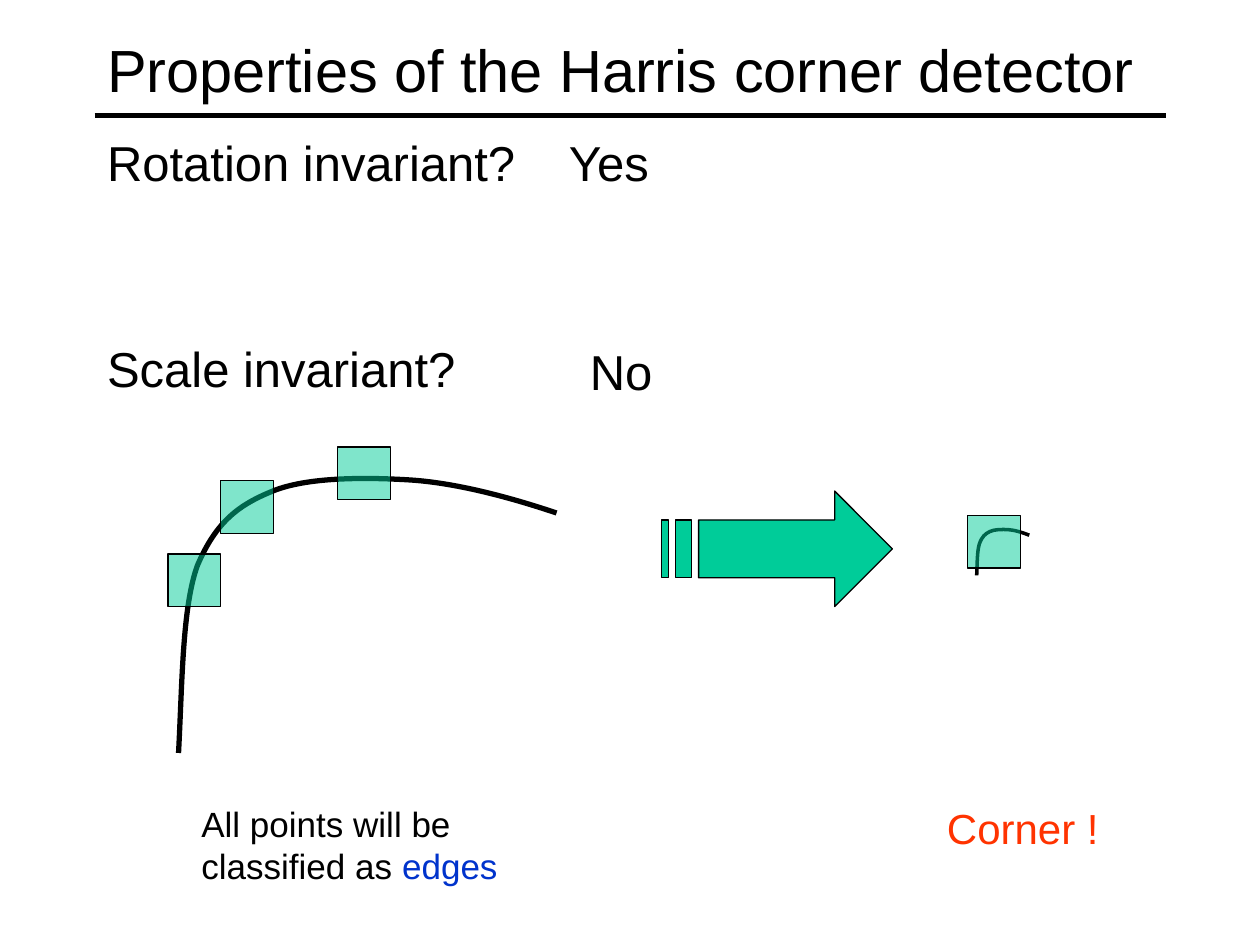
from lxml import etree
from pptx import Presentation
from pptx import util as u
from pptx.dml import color
from pptx.enum import shapes, text
from pptx.oxml import ns

INK = {"black": "000000", "green": "00CC99", "blue": "0033CC", "red": "FF3300"}
BEND = [(0, 1), (.01, .74), (.01, .47), (.05, .32), (.1, .16), (.16, .1), (.25, .05),
        (.34, 0), (.49, 0), (.61, .01), (.73, .02), (.87, .07), (1, .13)]
SIDE = 1.06


def rgb(name):
    """Return the named colour."""
    return color.RGBColor.from_string(INK[name])


def style(item, fill, width):
    """Give a shape its fill and black line."""
    item.shadow.inherit = False
    if fill:
        item.fill.solid()
        item.fill.fore_color.rgb = rgb(fill)
    else:
        item.fill.background()
    item.line.color.rgb = rgb("black")
    item.line.width = u.Pt(width)


def write(slide, box, paras, size, gap=0, anchor=text.MSO_ANCHOR.TOP):
    """Add a text box whose paragraphs are lists of (words, colour)."""
    frame = slide.shapes.add_textbox(*map(u.Cm, box)).text_frame
    frame.word_wrap = True
    frame.vertical_anchor = anchor
    for i, parts in enumerate(paras):
        para = frame.add_paragraph() if i else frame.paragraphs[0]
        para.space_before = u.Pt(gap if i else 0)
        for words, tint in parts:
            run = para.add_run()
            run.text = words
            run.font.name = "Arial"
            run.font.size = u.Pt(size)
            run.font.color.rgb = rgb(tint)


def trace(slide, box, loops, close):
    """Draw loops of unit points scaled to the box."""
    x, y, w, h = box
    loops = [[(u.Cm(x + w * a), u.Cm(y + h * b)) for a, b in loop] for loop in loops]
    pen = slide.shapes.build_freeform(*loops[0][0])
    for i, loop in enumerate(loops):
        if i:
            pen.move_to(*loop[0])
        pen.add_line_segments(loop[1:], close=close)
    return pen.convert_to_shape()


def curve(slide, box, width):
    """Draw the bent edge, turning each three segments into one cubic."""
    item = trace(slide, box, [BEND], False)
    legs = list(item.element.iter(ns.qn("a:lnTo")))
    for i in range(0, len(legs), 3):
        cubic = etree.Element(ns.qn("a:cubicBezTo"))
        legs[i].addprevious(cubic)
        for leg in legs[i:i + 3]:
            cubic.append(leg[0])
            leg.getparent().remove(leg)
    style(item, None, width)


def window(slide, x, y):
    """Place one see-through detector window."""
    pane = slide.shapes.add_shape(shapes.MSO_SHAPE.RECTANGLE, *map(u.Cm, (x, y, SIDE, SIDE)))
    style(pane, "green", .75)
    fill = pane.element.spPr.find(ns.qn("a:solidFill"))
    etree.SubElement(fill[0], ns.qn("a:alpha"), val="50000")


def arrow(slide, box):
    """Draw the striped arrow."""
    bars = [[(a, .25), (a, .75), (b, .75), (b, .25)] for a, b in ((.06, .13), (0, .03))]
    head = [(.75, 0), (.75, .25), (.16, .25), (.16, .75), (.75, .75), (.75, 1), (1, .5)]
    style(trace(slide, box, [head] + bars, True), "green", .75)


def header(slide, box):
    """Place the title and the rule below it."""
    x, y, w, h = box
    rule = slide.shapes.add_connector(
        shapes.MSO_CONNECTOR.STRAIGHT, *map(u.Cm, (x, y + 2.11, x + w, y + 2.11)))
    rule.line.color.rgb = rgb("black")
    rule.line.width = u.Pt(3)
    etree.SubElement(rule.element.spPr, ns.qn("a:effectLst"))
    write(slide, box, [[("Properties of the Harris corner detector", "black")]], 34,
          anchor=text.MSO_ANCHOR.MIDDLE)


def asks(slide, box):
    """Place the two questions and their answers."""
    x, y, w, h = box
    write(slide, box, [[("Rotation invariant?", "black")], [("Scale invariant?", "black")]],
          28, gap=84.4)
    for word, dx, dy in (("Yes", 9.31, 0), ("No", 9.73, 4.23)):
        write(slide, (x + dx, y + dy, 5.29, 1.45), [[(word, "black")]], 28)


def edges(slide, box):
    """Place the large curve, its windows and caption."""
    x, y, w, h = box
    curve(slide, (x + .21, y + .61, 7.62, 5.56), 3)
    for dx, dy in ((0, 2.16), (SIDE, .68), (3.42, 0)):
        window(slide, x + dx, y + dy)
    write(slide, (x + .42, y + 7.04, 7.2, 1.95),
          [[("All points will be classified as ", "black"), ("edges", "blue")]], 20)


def corner(slide, box):
    """Place the arrow, the small curve, its window and caption."""
    x, y, w, h = box
    curve(slide, (x + 6.35, y + .77, 1.06, .93), 2)
    window(slide, x + 6.17, y + .49)
    arrow(slide, (x, y, 4.65, 2.33))
    write(slide, (x + 5.5, y + 6.15, 3.81, 1.27), [[("Corner !", "red")]], 24)


def main():
    """Build and save the slide."""
    deck = Presentation()
    deck.slide_width, deck.slide_height = u.Cm(25.4), u.Cm(19.05)
    slide = deck.slides.add_slide(deck.slide_layouts[6])
    header(slide, (1.91, .22, 21.59, 2.33))
    asks(slide, (1.91, 2.54, 21.59, 6.35))
    edges(slide, (3.39, 9.01, 8, 9))
    corner(slide, (13.34, 9.9, 9.4, 7.5))
    deck.save("out.pptx")


if __name__ == "__main__":
    main()
